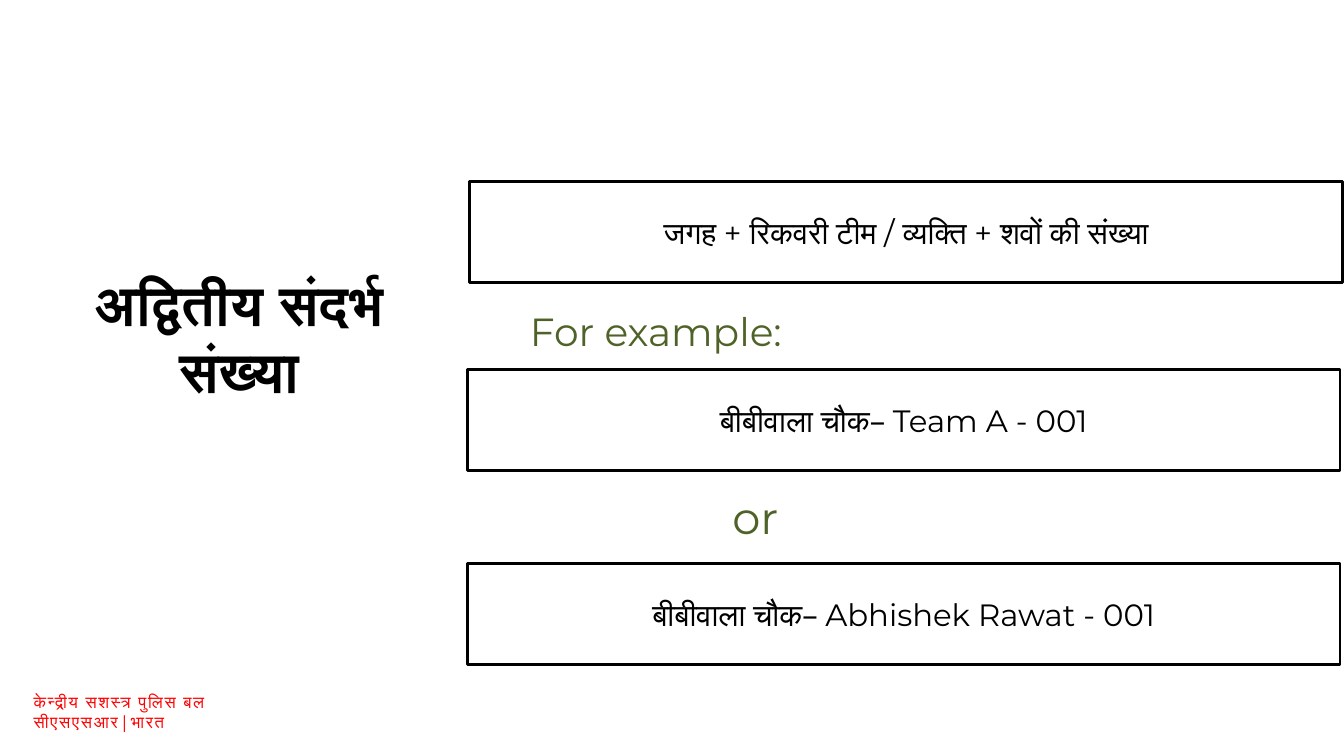
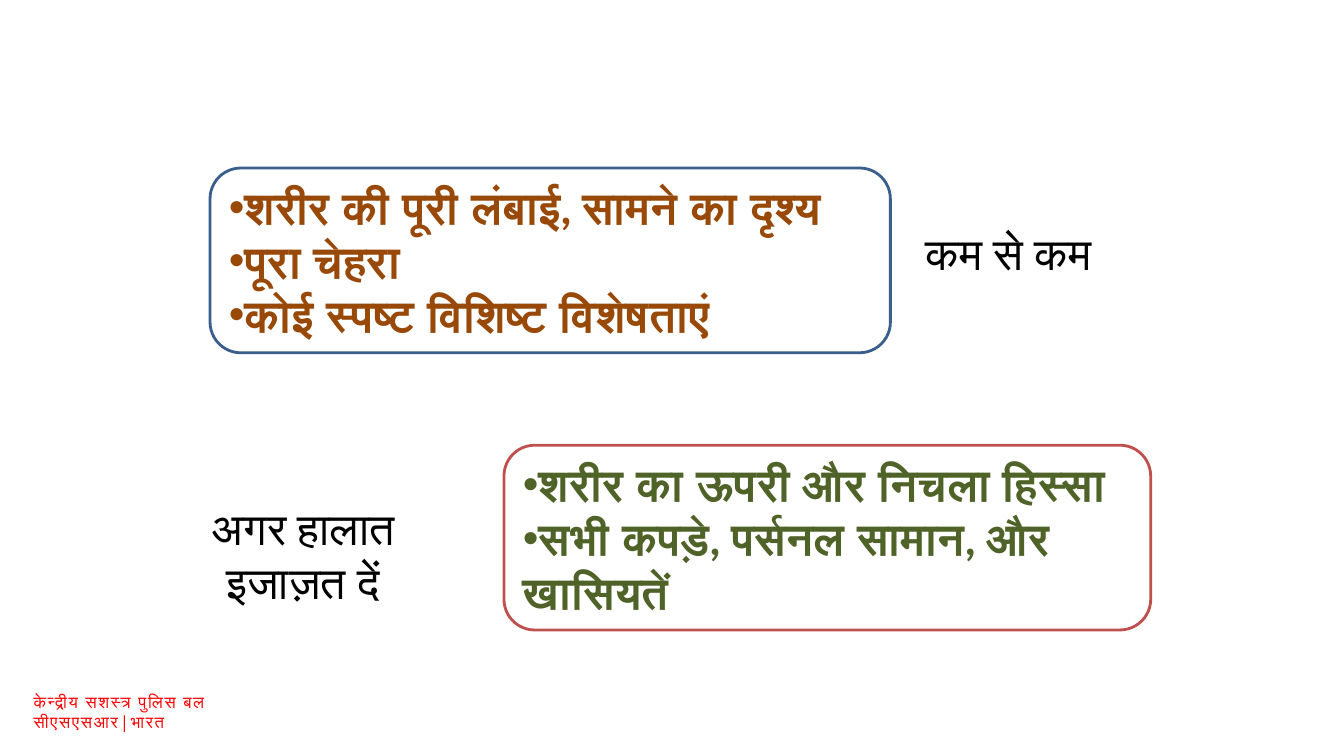
from lxml.etree import SubElement
from pptx import Presentation
from pptx.dml.color import RGBColor
from pptx.enum.shapes import MSO_SHAPE
from pptx.enum.text import MSO_ANCHOR, MSO_AUTO_SIZE, PP_ALIGN
from pptx.oxml.ns import qn
from pptx.util import Pt

COLORS = {
    "black": "000000",
    "white": "FFFFFF",
    "red": "FF0000",
    "green": "4F6228",
    "brown": "984807",
    "blue_line": "3A5F8C",
    "red_line": "C0504D",
}
TITLE_ONLY, BLANK = 5, 6


def rgb(name):
    return RGBColor.from_string(COLORS[name])


def style_paragraph(paragraph, font_name, size, color, bold=False, align=PP_ALIGN.LEFT,
                    spacing=None, script_font=None):
    paragraph.alignment = align
    font = paragraph.font
    font.name, font.size, font.bold = font_name, Pt(size), bold
    font.color.rgb = rgb(color)
    defaults = paragraph._p.pPr.find(qn("a:defRPr"))
    if script_font:
        SubElement(defaults, qn("a:cs")).set("typeface", script_font)
    if spacing:
        defaults.set("spc", str(spacing))


def add_bullet(paragraph):
    properties = paragraph._p.get_or_add_pPr()
    properties.set("marL", "0")
    properties.set("indent", "0")
    SubElement(properties, qn("a:buFont")).set("typeface", "Arial")
    SubElement(properties, qn("a:buChar")).set("char", "•")


def add_label(slide, text, place, font_name, size, color, wrap=True, **style):
    label = slide.shapes.add_textbox(*map(Pt, place))
    frame = label.text_frame
    frame.word_wrap = wrap
    frame.auto_size = MSO_AUTO_SIZE.SHAPE_TO_FIT_TEXT
    frame.text = text
    style_paragraph(frame.paragraphs[0], font_name, size, color, **style)
    return label


def add_panel(slide, preset, place, line, fill="white"):
    panel = slide.shapes.add_shape(preset, *map(Pt, place))
    panel.shadow.inherit = False
    if fill:
        panel.fill.solid()
        panel.fill.fore_color.rgb = rgb(fill)
    else:
        panel.fill.background()
    panel.line.color.rgb = rgb(line)
    panel.line.width = Pt(2)
    frame = panel.text_frame
    frame.word_wrap = True
    frame.vertical_anchor = MSO_ANCHOR.MIDDLE
    return frame


def add_reference_box(slide, text, left, top):
    frame = add_panel(slide, MSO_SHAPE.RECTANGLE, (left, top, 623.5, 72), "black")
    frame.text = text
    style_paragraph(frame.paragraphs[0], "Montserrat", 22, "black", align=PP_ALIGN.CENTER)


def add_photo_list(slide, items, place, line, color, fill="white"):
    frame = add_panel(slide, MSO_SHAPE.ROUNDED_RECTANGLE, place, line, fill)
    frame.text = "\n".join(items)
    for paragraph in frame.paragraphs:
        add_bullet(paragraph)
        style_paragraph(paragraph, "Lato", 32, color, bold=True)


def set_title(slide, text, place):
    title = slide.shapes.title
    title.left, title.top, title.width, title.height = map(Pt, place)
    frame = title.text_frame
    frame.text = text
    frame.word_wrap = True
    frame.auto_size = MSO_AUTO_SIZE.NONE
    frame.vertical_anchor = MSO_ANCHOR.MIDDLE
    style_paragraph(frame.paragraphs[0], "Montserrat", 40, "black", bold=True,
                    align=PP_ALIGN.CENTER, script_font="Montserrat")


def add_master_footer(presentation, slide):
    footer = add_label(slide, "केन्द्रीय सशस्त्र पुलिस बल सीएसएसआर|भारत", (21, 491, 183, 21),
                       "Open Sans", 12, "red", spacing=120)
    frame = footer.text_frame
    frame.margin_left = frame.margin_top = frame.margin_right = frame.margin_bottom = Pt(3)
    presentation.slide_master.shapes.element.append(footer.element)


def build_reference_slide(slide):
    set_title(slide, "अद्वितीय संदर्भ संख्या", (24, 174.5, 294, 132))
    add_reference_box(slide, "जगह + रिकवरी टीम / व्यक्ति + शवों की संख्या", 335.5, 129.75)
    add_label(slide, "For example:", (371.5, 216, 225, 41), "Montserrat", 28, "green")
    add_reference_box(slide, "बीबीवाला चौक– Team A - 001", 333.75, 264)
    add_label(slide, "or", (516, 346, 161, 46), "Montserrat", 32, "green")
    add_reference_box(slide, "बीबीवाला चौक– Abhishek Rawat - 001", 333.75, 402.75)


def build_photo_slide(slide):
    add_photo_list(slide, ["शरीर की पूरी लंबाई, सामने का दृश्य", "पूरा चेहरा", "कोई स्पष्ट विशिष्ट विशेषताएं"],
                   (150, 120, 486, 132), "blue_line", "brown", fill=None)
    add_label(slide, "कम से कम", (654, 158, 180, 46), "Lato", 32, "black")
    add_photo_list(slide, ["शरीर का ऊपरी और निचला हिस्सा", "सभी कपड़े, पर्सनल सामान, और खासियतें"],
                   (360, 318, 462, 132), "red_line", "green")
    add_label(slide, "अगर हालात\vइजाज़त दें", (114, 354, 205, 46), "Lato", 32, "black",
              wrap=False, align=PP_ALIGN.CENTER)


def main():
    presentation = Presentation()
    presentation.slide_width, presentation.slide_height = Pt(960), Pt(540)
    layouts = presentation.slide_layouts
    reference_slide = presentation.slides.add_slide(layouts[TITLE_ONLY])
    add_master_footer(presentation, reference_slide)
    build_reference_slide(reference_slide)
    build_photo_slide(presentation.slides.add_slide(layouts[BLANK]))
    presentation.save("out.pptx")


if __name__ == "__main__":
    main()
